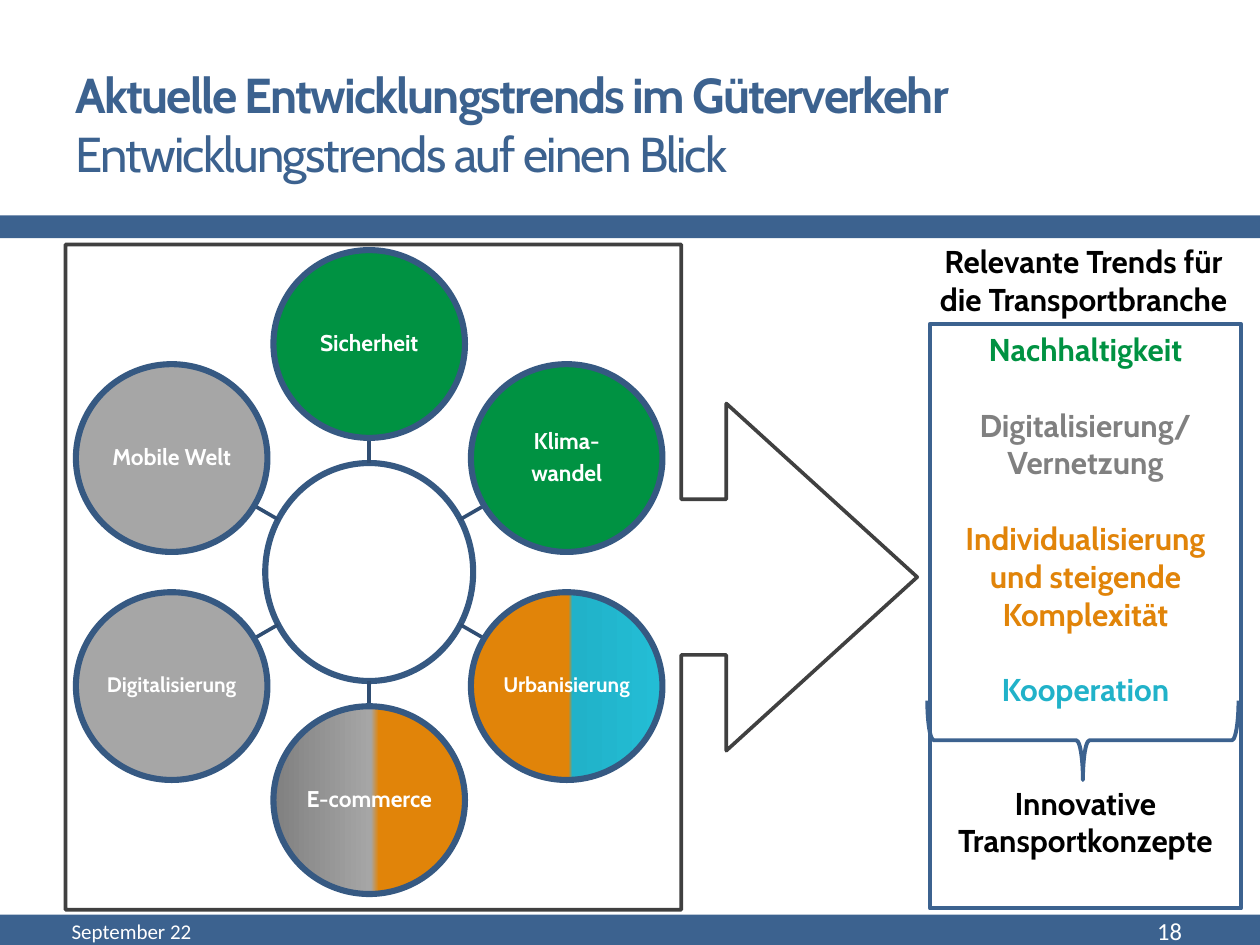
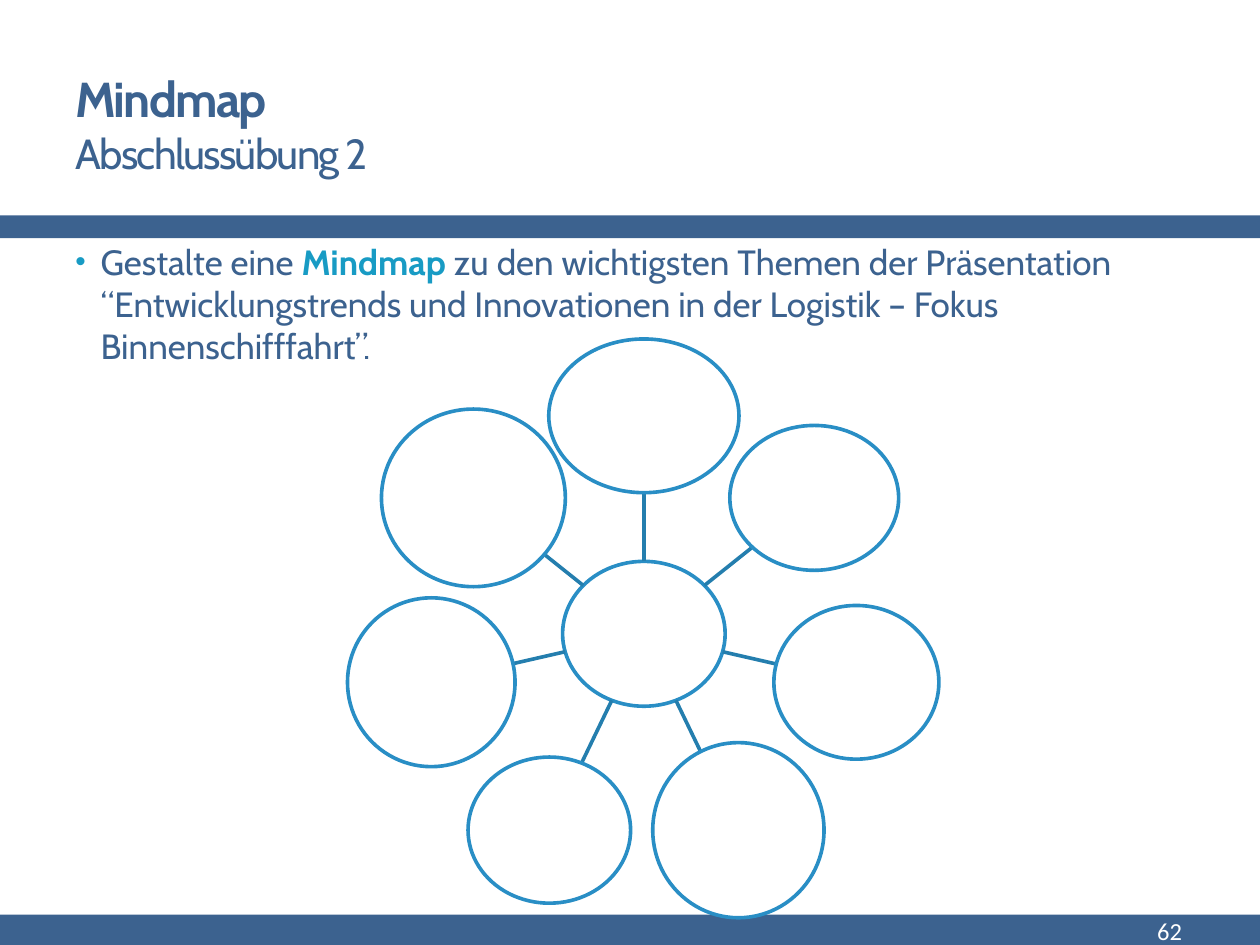
from math import cos, hypot, radians, sin

from lxml import etree
from pptx import Presentation
from pptx.dml.color import RGBColor
from pptx.enum.shapes import MSO_CONNECTOR, MSO_SHAPE
from pptx.enum.text import MSO_ANCHOR, PP_ALIGN
from pptx.oxml.ns import qn
from pptx.util import Inches, Pt

RECT, OVAL = MSO_SHAPE.RECTANGLE, MSO_SHAPE.OVAL
BRACE, CALLOUT = MSO_SHAPE.LEFT_BRACE, MSO_SHAPE.RIGHT_ARROW_CALLOUT
LINE = MSO_CONNECTOR.STRAIGHT
TOP, MIDDLE = MSO_ANCHOR.TOP, MSO_ANCHOR.MIDDLE
LEFT, CENTER, RIGHT = PP_ALIGN.LEFT, PP_ALIGN.CENTER, PP_ALIGN.RIGHT

# Shared colours and fonts
NAVY, WHITE, BLACK, DARK = "3C628F", "FFFFFF", "000000", "404040"
GREEN, ORANGE, TEAL, CYAN = "009242", "E18409", "21B2C9", "189BC4"
GREY, SILVER = "808080", "A6A6A6"
HEAD, FOOT = "Cabin", "Calibri"


def color(value):
    return RGBColor.from_string(value)


def blend(shape, stops):
    """Fill from left to right with (percent, colour) stops."""
    shape.fill.gradient()
    shape.fill.gradient_angle = 0
    group = next(shape._element.iter(qn("a:gsLst")))
    for old in list(group):
        group.remove(old)
    for spot, tint in stops:
        stop = etree.SubElement(group, qn("a:gs"), pos=str(spot * 1000))
        etree.SubElement(stop, qn("a:srgbClr"), val=tint)


def add_form(slide, kind, place, fill=None, line=None, width=2.25):
    shape = slide.shapes.add_shape(kind, *map(Inches, place))
    shape.shadow.inherit = False
    if isinstance(fill, list):
        blend(shape, fill)
    elif fill:
        shape.fill.solid()
        shape.fill.fore_color.rgb = color(fill)
    else:
        shape.fill.background()
    if line:
        shape.line.color.rgb = color(line)
        shape.line.width = Pt(width)
    else:
        shape.line.fill.background()
    return shape


def add_line(slide, start, end, tint):
    line = slide.shapes.add_connector(LINE, *map(Inches, start + end))
    line.line.color.rgb = color(tint)
    line.line.width = Pt(2.08)
    etree.SubElement(line._element.spPr, qn("a:effectLst"))


def add_run(para, text, tint, **style):
    run = para.add_run()
    run.text = text
    run.font.color.rgb = color(tint)
    for key, value in style.items():
        setattr(run.font, key, value)
    return run


def set_frame(shape, anchor=TOP, inset=None):
    frame = shape.text_frame
    frame.word_wrap = True
    frame.vertical_anchor = anchor
    if inset is not None:
        for side in ("left", "right", "top", "bottom"):
            setattr(frame, f"margin_{side}", Inches(inset))
    return frame


def add_para(frame, first, **style):
    para = frame.paragraphs[0] if first else frame.add_paragraph()
    for key, value in style.items():
        setattr(para, key, value)
    return para


def add_box(slide, place, anchor=TOP):
    return set_frame(slide.shapes.add_textbox(*map(Inches, place)), anchor)


def add_note(slide, place, text, tint, align, anchor=MIDDLE, **style):
    para = add_para(add_box(slide, place, anchor), True, alignment=align)
    add_run(para, text, tint, **style)


def add_base(deck, title, sub, size, page):
    """Start a slide with its bands, title and page number."""
    slide = deck.slides.add_slide(deck.slide_layouts[6])
    for top, height in ((7.26, 0.24), (1.71, 0.18)):
        add_form(slide, RECT, (0, top, 10, height), NAVY)
    para = add_box(slide, (0.5, 0.44, 8.28, 1.08), MIDDLE).paragraphs[0]
    runs = [add_run(para, title, NAVY, name=HEAD, size=Pt(28), bold=True)]
    para.add_line_break()
    runs.append(add_run(para, sub, NAVY, name=HEAD, size=Pt(size), bold=False))
    for run in runs:
        run.font._element.set("spc", "-100")
    add_note(slide, (8.31, 7.21, 1.17, 0.36), page, WHITE, RIGHT,
             name=FOOT, size=Pt(14))
    return slide


def add_oval(slide, mid, size, fill, line, width):
    place = (mid[0] - size[0] / 2, mid[1] - size[1] / 2, *size)
    return add_form(slide, OVAL, place, fill, line, width)


def reach(size, angle):
    """Distance from the middle of an ellipse to its edge."""
    return 1 / hypot(2 * cos(angle) / size[0], 2 * sin(angle) / size[1])


def add_wheel(slide, mid, hub, radius, nodes, line, spoke, width):
    """Place (size, fill) nodes clockwise around a hub, from the top."""
    add_oval(slide, mid, hub, WHITE, line, width)
    ovals = []
    for index, (size, fill) in enumerate(nodes):
        angle = radians(360 * index / len(nodes) - 90)

        def point(far):
            return mid[0] + far * cos(angle), mid[1] + far * sin(angle)

        add_line(slide, point(reach(hub, angle)),
                 point(radius - reach(size, angle)), spoke)
        ovals.append(add_oval(slide, point(radius), size, fill, line, width))
    return ovals


def add_label(oval, lines, size):
    frame = set_frame(oval, MIDDLE, 0.01)
    for index, text in enumerate(lines):
        para = add_para(frame, index == 0, alignment=CENTER,
                        line_spacing=0.9, space_after=Pt(size * 0.35))
        add_run(para, text, WHITE, name=HEAD, size=Pt(size), bold=True)


def add_trends(deck):
    slide = add_base(deck, "Aktuelle Entwicklungstrends im Güterverkehr",
                     "Entwicklungstrends auf einen Blick", 28, "18")
    add_note(slide, (0.47, 7.21, 3.17, 0.36), "September 22", WHITE, LEFT,
             name=FOOT, size=Pt(12))
    frame = add_form(slide, CALLOUT, (0.52, 1.94, 6.76, 5.28), None, DARK, 2.08)
    for index, value in enumerate((0.234, 0.261, 0.287, 0.723)):
        frame.adjustments[index] = value

    # Wheel of trends
    city = [(1, ORANGE), (51, ORANGE), (53, TEAL), (100, "23BDD5")]
    shop = [(0, GREY), (51, SILVER), (55, ORANGE), (100, ORANGE)]
    trends = [
        (["Sicherheit"], 13, GREEN),
        (["Klima-", "wandel"], 13, GREEN),
        (["Urbanisierung"], 12, city),
        (["E-commerce"], 13, shop),
        (["Digitalisierung"], 12, SILVER),
        (["Mobile Welt"], 13, SILVER),
    ]
    nodes = [((1.52, 1.49), fill) for _, _, fill in trends]
    ovals = add_wheel(slide, (2.93, 4.54), (1.65, 1.73), 1.81, nodes,
                      "365982", "304E73", 3.5)
    for oval, (lines, size, _) in zip(ovals, trends):
        add_label(oval, lines, size)

    # Relevant trends: text, colour, blank space above in points
    bold = {"name": HEAD, "size": Pt(18), "bold": True}
    gap = 21.6
    topics = [
        ("Nachhaltigkeit", GREEN, 0),
        ("Digitalisierung/", GREY, gap),
        ("Vernetzung", GREY, 0),
        ("Individualisierung und steigende Komplexität", ORANGE, gap),
        ("Kooperation", TEAL, gap),
        ("Innovative", BLACK, 2 * gap),
        ("Transportkonzepte", BLACK, 0),
    ]
    panel = add_form(slide, RECT, (7.38, 2.57, 2.47, 4.64), None, NAVY)
    frame = set_frame(panel)
    for index, (text, tint, space) in enumerate(topics):
        para = add_para(frame, index == 0, alignment=CENTER)
        if space:
            para.space_before = Pt(space)
        add_run(para, text, tint, **bold)
    brace = add_form(slide, BRACE, (8.28, 4.64, 0.63, 2.47), None, NAVY)
    brace.rotation = 270
    add_note(slide, (7.22, 1.87, 2.76, 0.71),
             "Relevante Trends für die Transportbranche", BLACK, CENTER, TOP,
             **bold)


def add_task(deck):
    slide = add_base(deck, "Mindmap", "Abschlussübung 2", 24, "62")

    # Bulleted task
    para = add_box(slide, (0.5, 1.86, 9, 5.22)).paragraphs[0]
    props = para._p.get_or_add_pPr()
    props.set("marL", str(Inches(0.2)))
    props.set("indent", str(Inches(-0.2)))
    tint = etree.SubElement(props, qn("a:buClr"))
    etree.SubElement(tint, qn("a:srgbClr"), val=CYAN)
    etree.SubElement(props, qn("a:buSzPct"), val="85000")
    etree.SubElement(props, qn("a:buFont"), typeface="Arial")
    etree.SubElement(props, qn("a:buChar"), char="•")
    parts = [
        ("Gestalte eine ", NAVY, False),
        ("Mindmap ", CYAN, True),
        ("zu den wichtigsten Themen der Präsentation “Entwicklungstrends und "
         "Innovationen in der Logistik – Fokus Binnenschifffahrt”.",
         NAVY, False),
    ]
    for text, shade, bold in parts:
        add_run(para, text, shade, name=HEAD, size=Pt(20), bold=bold)

    # Empty mind map
    sizes = [(1.51, 1.22), (1.34, 1.15), (1.31, 1.22), (1.36, 1.39),
             (1.29, 1.16), (1.33, 1.34), (1.46, 1.41)]
    add_wheel(slide, (5.11, 5.03), (1.29, 1.15), 1.73,
              [(size, WHITE) for size in sizes], "298EC5", "247EAE", 2.08)


def main():
    deck = Presentation()
    deck.slide_width, deck.slide_height = Inches(10), Inches(7.5)
    add_trends(deck)
    add_task(deck)
    deck.save("out.pptx")


if __name__ == "__main__":
    main()
